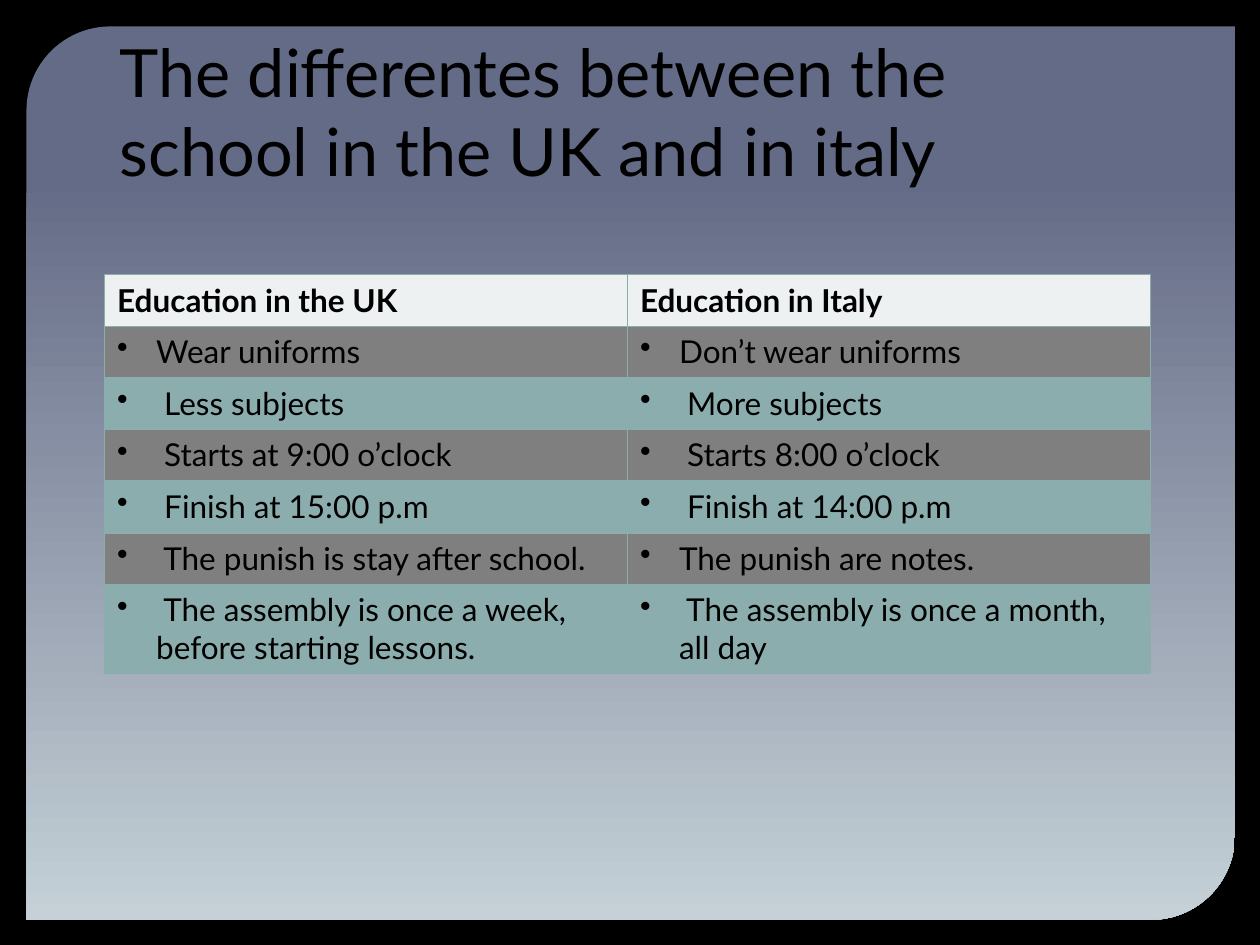
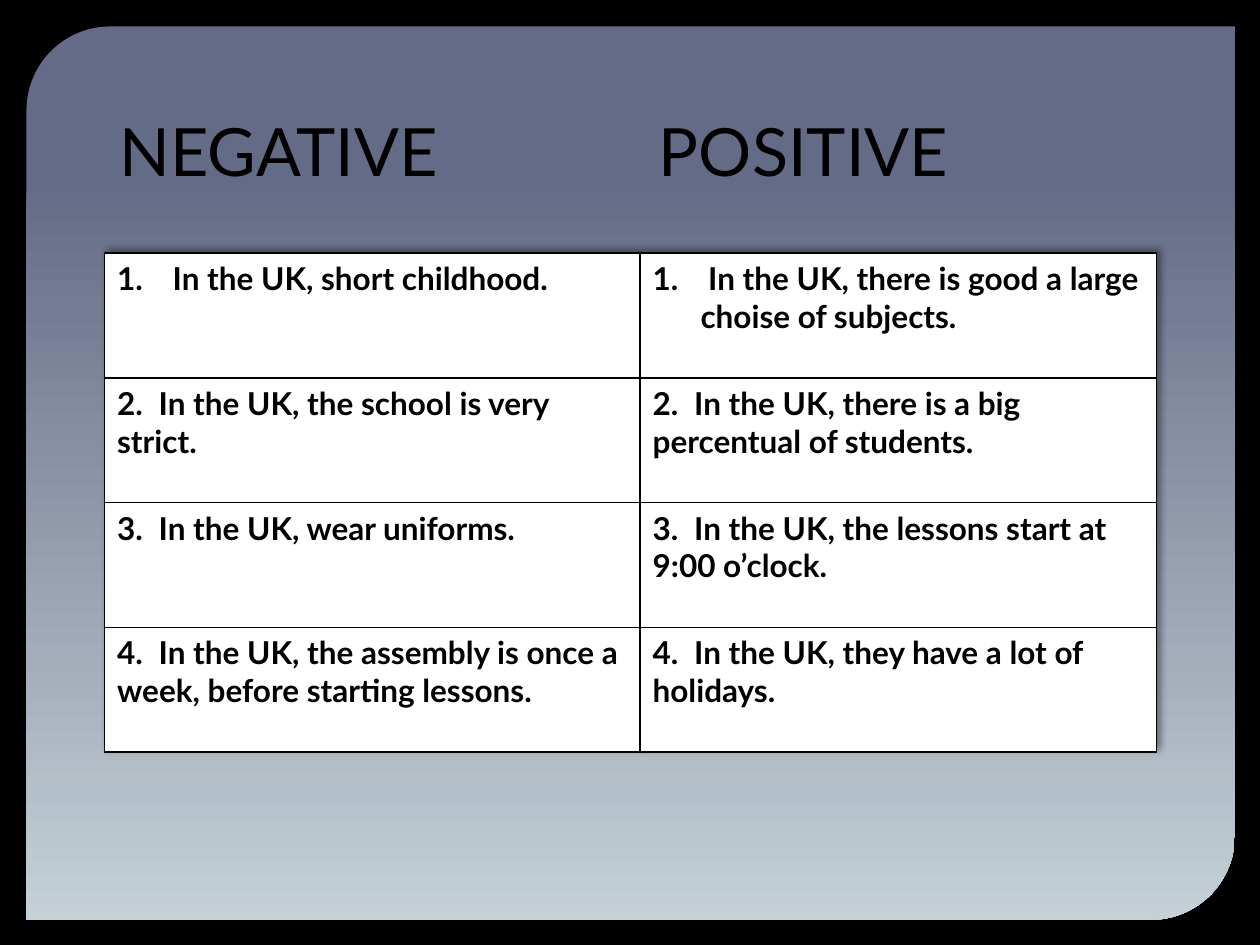
"""Build two slides that compare school in the UK and in Italy."""
from pptx import Presentation
from pptx.dml.color import RGBColor
from pptx.enum.shapes import MSO_SHAPE
from pptx.enum.text import MSO_ANCHOR, MSO_AUTO_SIZE, PP_ALIGN
from pptx.oxml import parse_xml
from pptx.oxml.ns import nsdecls
from pptx.util import Inches, Pt

INK = {
    "black": "000000", "white": "FFFFFF", "dusk": "646B86", "mist": "C5D1D7",
    "pale": "EEF1F2", "grey": "7F7F7F", "teal": "8CADAE",
}
FONT = "Lato"
NS = nsdecls("a")
DOT = f'<a:buChar {NS} char="•"/>'
NUM = f'<a:buAutoNum {NS} type="arabicPeriod"/>'

DECK = [
    {
        "title": "The differentes between the school in the UK and in italy",
        "top": 2.18, "cols": [4.15, 4.15], "rows": [0.41] * 6 + [0.7],
        "fills": ["pale"] + ["grey", "teal"] * 3, "line": "teal",
        "bold": [0], "marks": [None] + [DOT] * 6, "hang": 0.31, "shade": False,
        "cells": [
            ["Education in the UK", "Education in Italy"],
            ["Wear uniforms", "Don’t wear uniforms"],
            [" Less subjects", " More subjects"],
            [" Starts at 9:00 o’clock", " Starts 8:00 o’clock"],
            [" Finish at 15:00 p.m", " Finish at 14:00 p.m"],
            [" The punish is stay after school.", "The punish are notes."],
            [" The assembly is once a week, before starting lessons.",
             " The assembly is once a month, all day"],
        ],
    },
    {
        "title": "NEGATIVE\tPOSITIVE",
        "top": 2.01, "cols": [4.25, 4.1], "rows": [0.99] * 4,
        "fills": ["white"] * 4, "line": "black",
        "bold": range(4), "marks": [NUM] + [None] * 3, "hang": 0.38, "shade": True,
        "cells": [
            [" In the UK, short childhood.",
             " In the UK, there is good a large choise of subjects."],
            ["2.\tIn the UK, the school is very strict.",
             "2.\tIn the UK, there is a big percentual of students."],
            ["3.\tIn the UK, wear uniforms.",
             "3.\tIn the UK, the lessons start at 9:00 o’clock."],
            ["4.\tIn the UK, the assembly is once a week, before starting lessons.",
             "4.\tIn the UK, they have a lot of holidays."],
        ],
    },
]


def style(para, size, bold=False):
    for run in para.runs:
        run.font.name = FONT
        run.font.size = Pt(size)
        run.font.bold = bold
        run.font.color.rgb = RGBColor.from_string(INK["black"])


def add_tab(para, pos):
    para._p.get_or_add_pPr().append(parse_xml(
        f'<a:tabLst {NS}><a:tab pos="{Inches(pos)}" algn="l"/></a:tabLst>'))


prs = Presentation()
prs.slide_width, prs.slide_height = Inches(10), Inches(7.5)
base = prs.slide_master
back = base.background.fill
back.solid()
back.fore_color.rgb = RGBColor.from_string(INK["black"])
slides = [prs.slides.add_slide(prs.slide_layouts[5]) for page in DECK]

panel = slides[0].shapes.add_shape(
    MSO_SHAPE.ROUND_2_DIAG_RECTANGLE,
    Inches(0.21), Inches(0.21), Inches(9.59), Inches(7.09))
panel.adjustments[0] = 0.094
panel.adjustments[1] = 0
panel.shadow.inherit = False
panel.line.fill.background()
panel.fill.gradient()
panel.fill.gradient_angle = 270
for stop, pos, name in zip(panel.fill.gradient_stops, [0.17, 1], ["dusk", "mist"]):
    stop.position = pos
    stop.color.rgb = RGBColor.from_string(INK[name])
base.shapes.element.insert(2, panel.element)

for slide, page in zip(slides, DECK):
    title = slide.shapes.title
    title.left, title.top = Inches(0.85), Inches(0.42)
    title.width, title.height = Inches(8.29), Inches(1.14)
    frame = title.text_frame
    frame.text = page["title"]
    frame.auto_size = MSO_AUTO_SIZE.NONE
    frame.vertical_anchor = MSO_ANCHOR.BOTTOM
    head = frame.paragraphs[0]
    head.alignment = PP_ALIGN.LEFT
    if "\t" in head.text:
        add_tab(head, 4.28)
    style(head, 38)

    cols, rows = page["cols"], page["rows"]
    box = slide.shapes.add_table(
        len(rows), len(cols), Inches(0.83), Inches(page["top"]),
        Inches(sum(cols)), Inches(sum(rows)))
    table = box.table
    table.first_row = table.horz_banding = False
    for col, width in zip(table.columns, cols):
        col.width = Inches(width)
    for row, height in zip(table.rows, rows):
        row.height = Inches(height)

    for r, texts in enumerate(page["cells"]):
        for c, text in enumerate(texts):
            cell = table.cell(r, c)
            cell.fill.solid()
            cell.fill.fore_color.rgb = RGBColor.from_string(INK[page["fills"][r]])
            para = cell.text_frame.paragraphs[0]
            para.text = text
            mark = page["marks"][r]
            if mark:
                props = para._p.get_or_add_pPr()
                props.set("marL", str(Inches(page["hang"])))
                props.set("indent", str(-Inches(page["hang"])))
                props.append(parse_xml(mark))
            elif "\t" in text:
                add_tab(para, 0.33)
            style(para, 18, r in page["bold"])

    for props in box.element.xpath(".//a:tcPr"):
        for i, side in enumerate("LRTB"):
            props.insert(i, parse_xml(
                f'<a:ln{side} {NS} w="{Pt(1)}"><a:solidFill>'
                f'<a:srgbClr val="{INK[page["line"]]}"/></a:solidFill></a:ln{side}>'))
    if page["shade"]:
        box.element.xpath(".//a:tblPr")[0].insert(0, parse_xml(
            f'<a:effectLst {NS}><a:outerShdw blurRad="{Pt(4)}" dist="{Pt(3)}" '
            f'dir="18900000" algn="bl" rotWithShape="0"><a:srgbClr val="{INK["black"]}">'
            '<a:alpha val="40000"/></a:srgbClr></a:outerShdw></a:effectLst>'))

prs.save("out.pptx")
